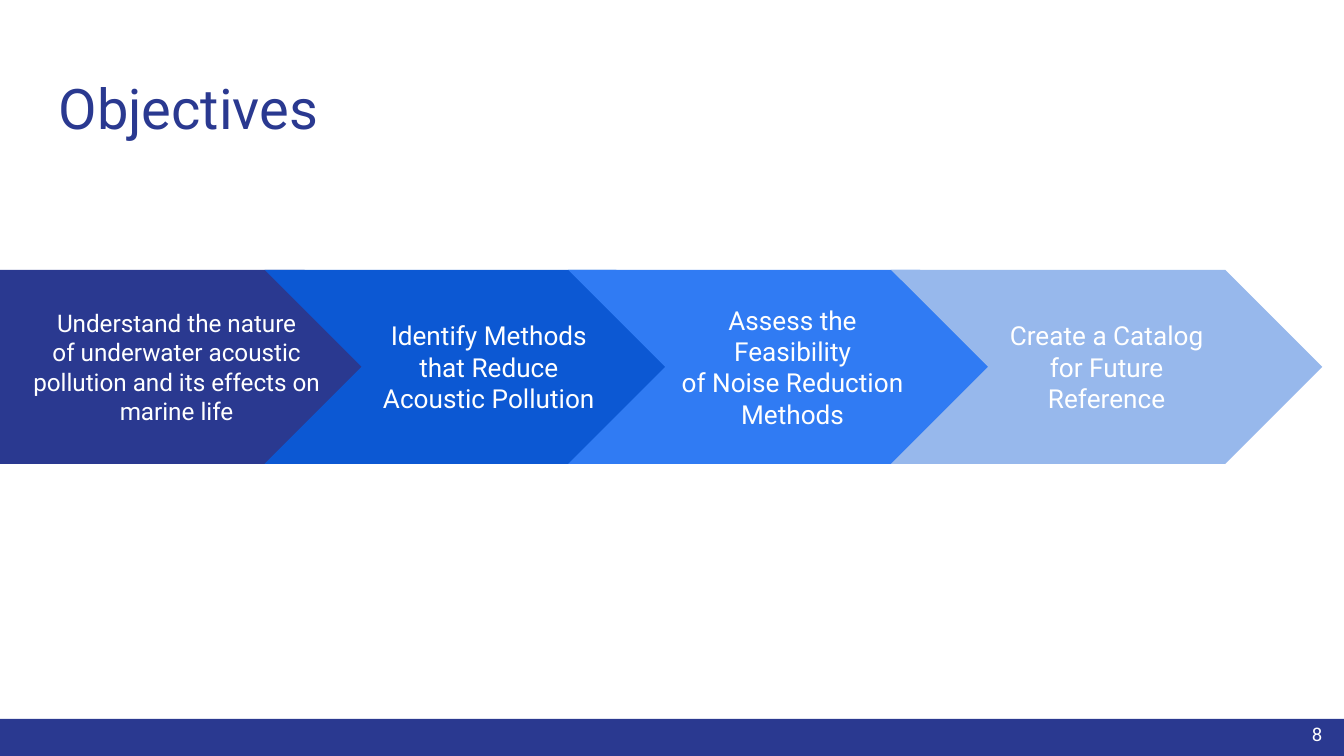
import pptx
import pptx.dml.color
import pptx.enum.shapes
import pptx.enum.text
import pptx.util

Cm = pptx.util.Cm
RGB = pptx.dml.color.RGBColor
KIND = pptx.enum.shapes.MSO_SHAPE
ALIGN = pptx.enum.text.PP_ALIGN
MID = pptx.enum.text.MSO_ANCHOR.MIDDLE
TOP = pptx.enum.text.MSO_ANCHOR.TOP

NAVY = RGB(0x2A, 0x39, 0x90)
BLUE = RGB(0x0C, 0x58, 0xD3)
AZURE = RGB(0x30, 0x7B, 0xF3)
PALE = RGB(0x97, 0xB8, 0xEC)
WHITE = RGB(0xFF, 0xFF, 0xFF)


def add_block(kind, box, fill):
    block = slide.shapes.add_shape(kind, *map(Cm, box))
    block.shadow.inherit = False
    block.fill.solid()
    block.fill.fore_color.rgb = fill
    block.line.fill.background()
    return block


def write(shape, lines, size, color, align, anchor=MID):
    """Fill the shape with one paragraph for each line."""
    frame = shape.text_frame
    form = {"word_wrap": True, "vertical_anchor": anchor}
    for side in ("left", "top", "right", "bottom"):
        form["margin_" + side] = Cm(0.25)
    for name, value in form.items():
        setattr(frame, name, value)
    frame.text = "\n".join(lines)
    for para in frame.paragraphs:
        para.alignment = align
        font = para.runs[0].font
        for name, value in {"name": "Roboto", "size": pptx.util.Pt(size)}.items():
            setattr(font, name, value)
        font.color.rgb = color


deck = pptx.Presentation()
deck.slide_width = Cm(25.4)
deck.slide_height = Cm(14.29)
slide = deck.slides.add_slide(deck.slide_layouts[6])

# Footer bar and title
add_block(KIND.RECTANGLE, (0, 13.59, 25.4, 0.7), NAVY)
title = slide.shapes.add_textbox(Cm(0.86), Cm(1.14), Cm(23.67), Cm(1.68))
write(title, ["Objectives"], 30, NAVY, ALIGN.LEFT, TOP)

# Overlapping steps, from left to right
steps = [
    (KIND.PENTAGON, 0, 7.59, NAVY, 13,
     ["Understand the nature",
      "of underwater acoustic pollution and its effects on marine life"]),
    (KIND.CHEVRON, 5, 8.48, BLUE, 14,
     ["Identify Methods that Reduce", "Acoustic Pollution"]),
    (KIND.CHEVRON, 10.74, 8.48, AZURE, 14,
     ["Assess the Feasibility", "of Noise Reduction Methods"]),
    (KIND.CHEVRON, 16.84, 8.15, PALE, 14,
     ["Create a Catalog for Future Reference"]),
]
for kind, left, width, fill, size, lines in steps:
    step = add_block(kind, (left, 5.1, width, 3.67), fill)
    write(step, lines, size, WHITE, ALIGN.CENTER)

# Page number
page = slide.shapes.add_textbox(Cm(23.72), Cm(13.34), Cm(1.52), Cm(1.09))
write(page, ["8"], 10, WHITE, ALIGN.RIGHT)

deck.save("out.pptx")
